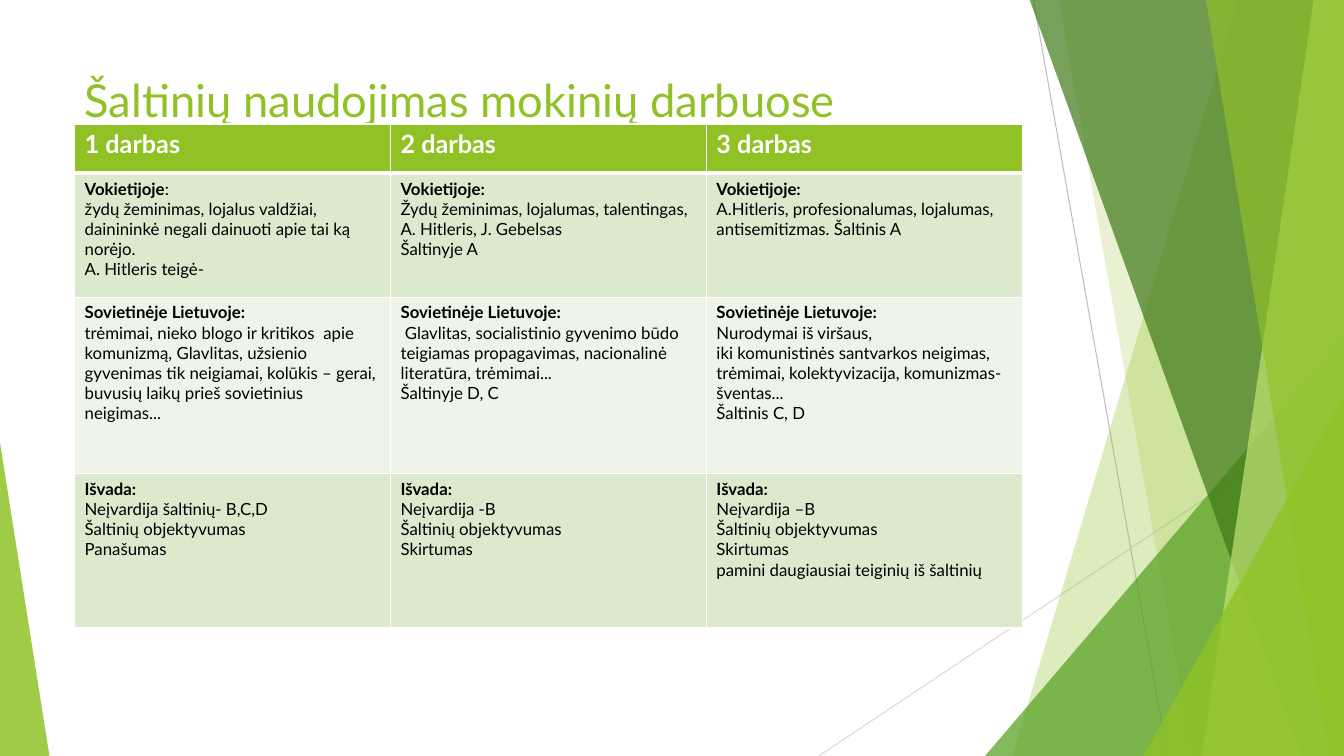
from dataclasses import dataclass

from lxml import etree
from pptx import Presentation
from pptx import util as u
from pptx.dml.color import RGBColor
from pptx.enum import shapes, text
from pptx.oxml import ns


@dataclass(frozen=True)
class Theme:
    """Colours, font and type sizes of the slide."""
    font: str = "Lato"
    green: str = "90C226"
    leaf: str = "54A021"
    forest: str = "3F7819"
    lime: str = "C0E474"
    white: str = "FFFFFF"
    black: str = "000000"
    grey: str = "BFBFBF"
    pale_grey: str = "D9D9D9"
    band: str = "DBE9CD"
    pale_band: str = "EEF4E8"
    title_size: float = 32.4
    header_size: float = 18
    body_size: float = 12


THEME = Theme()
SLIDE_BOX = (0, 0, 13.33, 7.5)
TITLE_BOX = (0.74, 0.67, 9.4, 0.57)
TABLE_BOX = (0.74, 1.23, 9.4, 4.99)
ROW_HEIGHTS = (0.49, 1.23, 1.75, 1.53)

TITLE = "Šaltinių naudojimas mokinių darbuose"
HEADERS = ("1 darbas", "2 darbas", "3 darbas")
# A bar in a topic marks where its bold part ends.
FINDINGS = (
    (
        ("Vokietijoje|:",
         "žydų žeminimas, lojalus valdžiai, dainininkė negali dainuoti apie tai ką norėjo.",
         "A. Hitleris teigė-"),
        ("Vokietijoje:",
         "Žydų žeminimas, lojalumas, talentingas, A. Hitleris, J. Gebelsas",
         "Šaltinyje A"),
        ("Vokietijoje:",
         "A.Hitleris, profesionalumas, lojalumas, antisemitizmas. Šaltinis A"),
    ),
    (
        ("Sovietinėje Lietuvoje:",
         "trėmimai, nieko blogo ir kritikos  apie komunizmą, Glavlitas, užsienio gyvenimas "
         "tik neigiamai, kolūkis – gerai, buvusių laikų prieš sovietinius neigimas..."),
        ("Sovietinėje Lietuvoje:",
         " Glavlitas, socialistinio gyvenimo būdo teigiamas propagavimas, "
         "nacionalinė literatūra, trėmimai...",
         "Šaltinyje D, C"),
        ("Sovietinėje Lietuvoje:",
         "Nurodymai iš viršaus,",
         "iki komunistinės santvarkos neigimas,",
         "trėmimai, kolektyvizacija, komunizmas-šventas...",
         "Šaltinis C, D"),
    ),
    (
        ("Išvada:", "Neįvardija šaltinių- B,C,D", "Šaltinių objektyvumas", "Panašumas"),
        ("Išvada:", "Neįvardija -B", "Šaltinių objektyvumas", "Skirtumas"),
        ("Išvada:", "Neįvardija –B", "Šaltinių objektyvumas", "Skirtumas",
         "pamini daugiausiai teiginių iš šaltinių"),
    ),
)


def colour(code):
    """Return the RGB colour for a hex code."""
    return RGBColor.from_string(code)


def set_font(font, size, code, bold=False):
    """Apply the theme font with a size, colour and weight."""
    font.name, font.size, font.bold = THEME.font, u.Pt(size), bold
    font.color.rgb = colour(code)


def tint(shape, code, opacity):
    """Fill a shape with a see-through colour and no outline or shadow."""
    shape.shadow.inherit = False
    shape.line.fill.background()
    shape.fill.solid()
    shape.fill.fore_color.rgb = colour(code)
    fill_colour = shape.fill._xPr.find(ns.qn("a:solidFill"))[0]
    etree.SubElement(fill_colour, ns.qn("a:alpha"), val=str(opacity * 1000))


def add_ray(slide, start, end, code):
    """Draw a thin line between two points."""
    ray = slide.shapes.add_connector(
        shapes.MSO_CONNECTOR.STRAIGHT, *map(u.Inches, start + end))
    ray.line.color.rgb = colour(code)
    ray.line.width = u.Pt(0.75)
    etree.SubElement(ray._element.spPr, ns.qn("a:effectLst"))


def add_panel(slide, box, top_left, bottom_left, code, opacity):
    """Draw a slanted panel that reaches the right edge of the box."""
    left, top, width, height = box
    right, bottom, above = left + width, top + height, top - 0.01
    corners = [(left + top_left, above), (right, above),
               (right, bottom), (left + bottom_left, bottom)]
    points = [(u.Inches(x), u.Inches(y)) for x, y in corners]
    outline = slide.shapes.build_freeform(*points[0])
    outline.add_line_segments(points[1:], close=True)
    tint(outline.convert_to_shape(), code, opacity)


def add_wedge(slide, box, left, width, height, apex, code, opacity):
    """Draw a triangle standing on the bottom edge of the box."""
    wedge = slide.shapes.add_shape(
        shapes.MSO_SHAPE.ISOSCELES_TRIANGLE,
        u.Inches(box[0] + left), u.Inches(box[1] + box[3] - height),
        u.Inches(width), u.Inches(height))
    wedge.adjustments[0] = apex
    tint(wedge, code, opacity)


def add_backdrop(slide, box):
    """Layer the rays, panels and wedges from back to front."""
    left, top, width, height = box
    right, bottom = left + width, top + height
    add_ray(slide, (left + 10.25, top), (left + 11.58, bottom), THEME.grey)
    add_ray(slide, (right, top + 4.03), (left + 8.12, bottom), THEME.pale_grey)
    add_panel(slide, box, 12.28, 10.04, THEME.green, 30)
    add_panel(slide, box, 10.5, 11.83, THEME.green, 20)
    add_wedge(slide, box, 9.77, 3.56, 4.17, 1, THEME.leaf, 72)
    add_panel(slide, box, 10.21, 12.91, THEME.forest, 70)
    add_panel(slide, box, 13.03, 11.92, THEME.lime, 70)
    add_panel(slide, box, 11.96, 13.18, THEME.green, 65)
    add_wedge(slide, box, 11.34, 1.99, 3.57, 1, THEME.green, 80)
    add_wedge(slide, box, 0, 0.49, 3.11, 0, THEME.green, 85)


def add_title(slide, box):
    """Place and format the title placeholder."""
    title = slide.shapes.title
    title.left, title.top, title.width, title.height = map(u.Inches, box)
    frame = title.text_frame
    frame.text = TITLE
    frame.word_wrap = True
    frame.auto_size = text.MSO_AUTO_SIZE.NONE
    frame.vertical_anchor = text.MSO_ANCHOR.TOP
    heading = frame.paragraphs[0]
    heading.alignment = text.PP_ALIGN.LEFT
    set_font(heading.font, THEME.title_size, THEME.green)


def style_cell(cell, code, top_width, bottom_width):
    """Fill a cell and give it white borders."""
    cell.fill.solid()
    cell.fill.fore_color.rgb = colour(code)
    properties = cell._tc.get_or_add_tcPr()
    widths = {"L": 1, "R": 1, "T": top_width, "B": bottom_width}
    for place, (side, width) in enumerate(widths.items()):
        border = etree.Element(ns.qn(f"a:ln{side}"), w=str(u.Pt(width)))
        paint = etree.SubElement(border, ns.qn("a:solidFill"))
        etree.SubElement(paint, ns.qn("a:srgbClr"), val=THEME.white)
        properties.insert(place, border)


def write_finding(cell, finding):
    """Write a bold topic and the remarks below it."""
    topic, *remarks = finding
    frame = cell.text_frame
    topic_line = frame.paragraphs[0]
    bold_part, _, plain_part = topic.partition("|")
    set_font(topic_line.font, THEME.body_size, THEME.black)
    for words, bold in ((bold_part, True), (plain_part, False)):
        if words:
            run = topic_line.add_run()
            run.text = words
            run.font.bold = bold
    for remark in remarks:
        remark_line = frame.add_paragraph()
        remark_line.text = remark
        set_font(remark_line.font, THEME.body_size, THEME.black)


def add_findings(slide, box):
    """Build the table that compares the three works."""
    table = slide.shapes.add_table(
        len(ROW_HEIGHTS), len(HEADERS), *map(u.Inches, box)).table
    for column in table.columns:
        column.width = u.Inches(box[2] / len(HEADERS))
    for row, height in zip(table.rows, ROW_HEIGHTS):
        row.height = u.Inches(height)
    for cell, header in zip(table.rows[0].cells, HEADERS):
        cell.text = header
        set_font(cell.text_frame.paragraphs[0].font, THEME.header_size, THEME.white, True)
        style_cell(cell, THEME.green, 1, 3)
    for number, findings in enumerate(FINDINGS, 1):
        band = THEME.band if number % 2 else THEME.pale_band
        for cell, finding in zip(table.rows[number].cells, findings):
            write_finding(cell, finding)
            style_cell(cell, band, 3 if number == 1 else 1, 1)


def main():
    """Build and save the slide."""
    deck = Presentation()
    deck.slide_width, deck.slide_height = map(u.Inches, SLIDE_BOX[2:])
    slide = deck.slides.add_slide(deck.slide_layouts.get_by_name("Title Only"))
    add_backdrop(slide, SLIDE_BOX)
    add_title(slide, TITLE_BOX)
    add_findings(slide, TABLE_BOX)
    deck.save("out.pptx")


if __name__ == "__main__":
    main()
